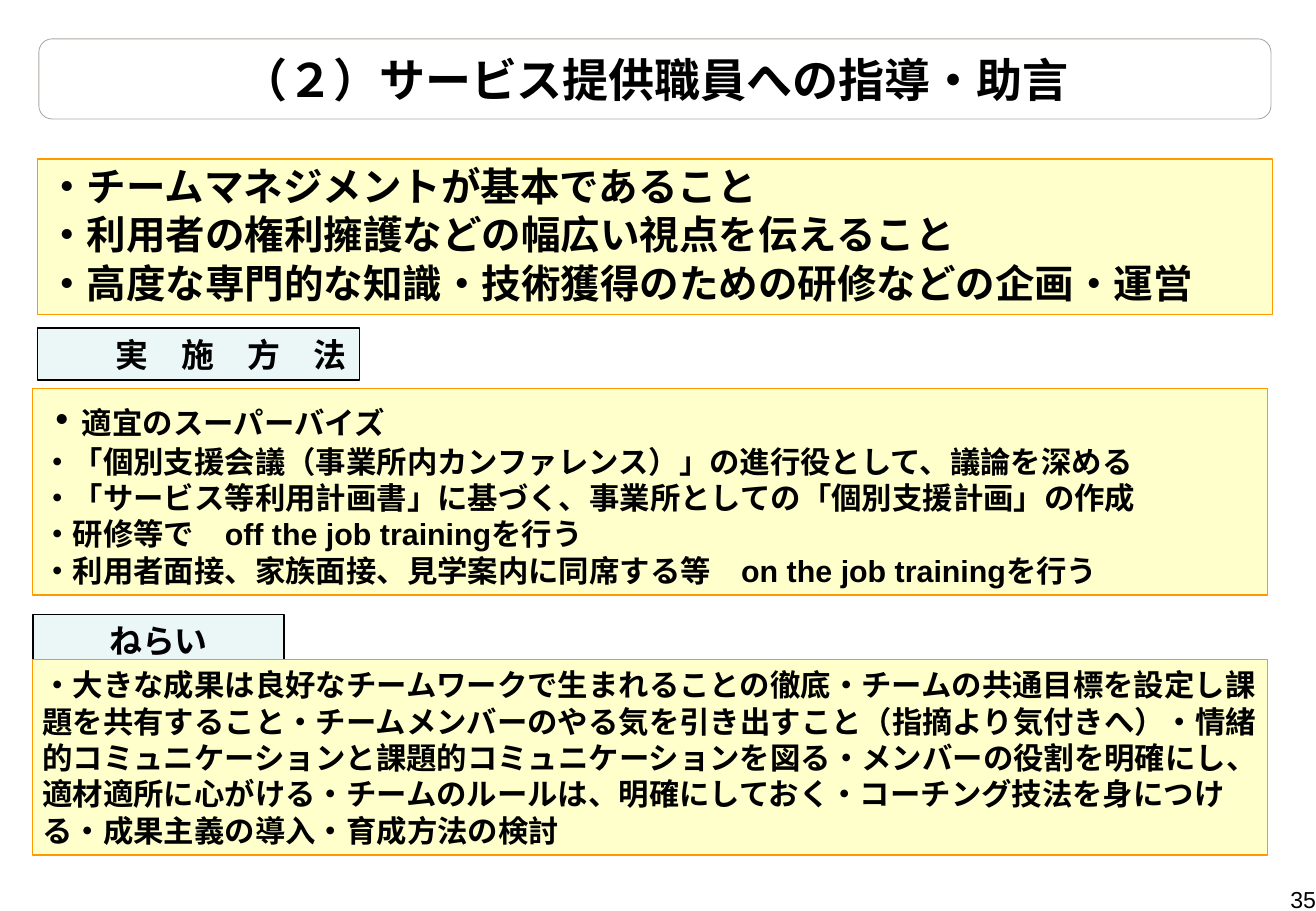
import pptx
import pptx.util
import pptx.dml.color
import pptx.enum.shapes
import pptx.enum.text
import pptx.oxml
import pptx.oxml.ns

Inches = pptx.util.Inches
Pt = pptx.util.Pt
RGB = pptx.dml.color.RGBColor
SHAPE = pptx.enum.shapes.MSO_SHAPE
ALIGN = pptx.enum.text.PP_ALIGN
ANCHOR = pptx.enum.text.MSO_ANCHOR

BLACK = RGB(0x00, 0x00, 0x00)
WHITE = RGB(0xFF, 0xFF, 0xFF)
GRAY = RGB(0xB0, 0xA8, 0xA0)
CREAM = RGB(0xFF, 0xFF, 0xCC)
ORANGE = RGB(0xFF, 0x99, 0x00)
PALE_BLUE = RGB(0xEB, 0xF6, 0xF7)

PRINCIPLES = [
    "・チームマネジメントが基本であること",
    "・利用者の権利擁護などの幅広い視点を伝えること",
    "・高度な専門的な知識・技術獲得のための研修などの企画・運営",
]
METHODS = [
    [("・", 23.4), ("適宜のスーパーバイズ", 18)],
    "・「個別支援会議（事業所内カンファレンス）」の進行役として、議論を深める",
    "・「サービス等利用計画書」に基づく、事業所としての「個別支援計画」の作成",
    "・研修等で　off the job trainingを行う",
    "・利用者面接、家族面接、見学案内に同席する等　on the job trainingを行う",
]
AIMS = [
    "・大きな成果は良好なチームワークで生まれることの徹底"
    "・チームの共通目標を設定し課題を共有すること"
    "・チームメンバーのやる気を引き出すこと（指摘より気付きへ）"
    "・情緒的コミュニケーションと課題的コミュニケーションを図る"
    "・メンバーの役割を明確にし、適材適所に心がける"
    "・チームのルールは、明確にしておく"
    "・コーチング技法を身につける・成果主義の導入・育成方法の検討"
]


def add_run(p, text, size, font="Arial", bold=True):
    r = p.add_run()
    r.text = text
    r.font.size = Pt(size)
    r.font.name = font
    r.font.bold = bold
    r.font.color.rgb = BLACK
    ea = pptx.oxml.parse_xml(
        f'<a:ea {pptx.oxml.ns.nsdecls("a")} typeface="{font}"/>')
    r.font._element.find(pptx.oxml.ns.qn("a:latin")).addnext(ea)


class Deck:
    def __init__(self, width, height):
        self.prs = pptx.Presentation()
        self.prs.slide_width = Inches(width)
        self.prs.slide_height = Inches(height)
        self.s = self.prs.slides.add_slide(self.prs.slide_layouts[6])

    def fill_text(self, sp, paragraphs, size, margins, align=ALIGN.LEFT,
                  line_spacing=1.0, space_after=0, **run_format):
        tf = sp.text_frame
        tf.word_wrap = True
        tf.margin_left, tf.margin_top, tf.margin_right, tf.margin_bottom = map(Inches, margins)
        for i, parts in enumerate(paragraphs):
            p = tf.paragraphs[0] if i == 0 else tf.add_paragraph()
            p.alignment = align
            p.line_spacing = line_spacing
            p.space_after = Pt(space_after)
            if isinstance(parts, str):
                parts = [(parts, size)]
            for text, run_size in parts:
                add_run(p, text, run_size, **run_format)

    def box(self, at, paragraphs, size, shape=SHAPE.RECTANGLE, fill=CREAM,
            line=ORANGE, line_width=0.75, margins=(0.08, 0.05, 0.08, 0.05), **text_format):
        sp = self.s.shapes.add_shape(shape, *map(Inches, at))
        sp.shadow.inherit = False
        sp.fill.solid()
        sp.fill.fore_color.rgb = fill
        sp.line.color.rgb = line
        sp.line.width = Pt(line_width)
        sp.text_frame.vertical_anchor = ANCHOR.MIDDLE
        self.fill_text(sp, paragraphs, size, margins, **text_format)

    def heading(self, at, text, **text_format):
        self.box(at, [text], 19.5, fill=PALE_BLUE, line=BLACK, line_width=1, **text_format)

    def page_number(self, at, text):
        sp = self.s.shapes.add_textbox(*map(Inches, at))
        self.fill_text(sp, [text], 13.7, (0, 0.05, 0, 0), align=ALIGN.RIGHT, bold=False)


def main():
    deck = Deck(10.83, 7.5)
    deck.box((0.31, 1.31, 10.16, 1.28), PRINCIPLES, 23.4, line_spacing=0.9, space_after=3.5)
    deck.heading((0.31, 2.7, 2.65, 0.43), "実　施　方　法", margins=(0.64, 0.05, 0, 0.05))
    deck.box((0.32, 0.32, 10.14, 0.66), ["（２）サービス提供職員への指導・助言"], 27.3,
             shape=SHAPE.ROUNDED_RECTANGLE, fill=WHITE, line=GRAY, line_width=0.5,
             margins=(0.08, 0.01, 0.08, 0.01), align=ALIGN.CENTER)
    deck.box((0.27, 3.2, 10.16, 1.7), METHODS, 18)
    deck.heading((0.27, 5.06, 2.07, 0.43), "ねらい", align=ALIGN.CENTER)
    deck.box((0.27, 5.43, 10.16, 1.61), AIMS, 18, font="Noto Sans CJK JP")
    deck.page_number((8.3, 7.24, 2.53, 0.26), "35")
    deck.prs.save("out.pptx")


if __name__ == "__main__":
    main()
